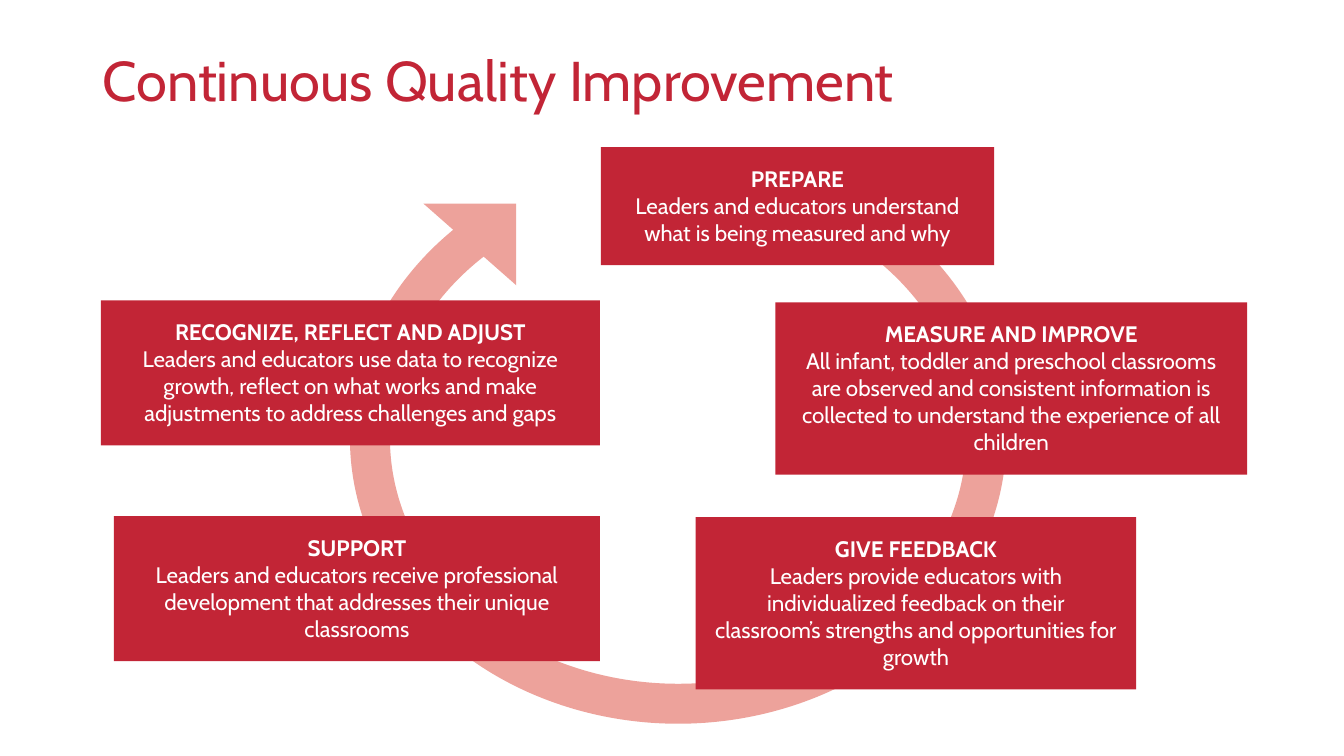
from pptx import Presentation
from pptx.dml.color import RGBColor
from pptx.enum.shapes import MSO_SHAPE
from pptx.enum.text import MSO_ANCHOR, MSO_AUTO_SIZE, PP_ALIGN
from pptx.util import Inches, Pt

RED = RGBColor(0xC2, 0x25, 0x36)
PINK = RGBColor(0xED, 0xA2, 0x9B)
WHITE = RGBColor(0xFF, 0xFF, 0xFF)

STEPS = [
    ((5.96, 1.46, 3.9, 1.17), "PREPARE",
     "Leaders and educators understand what is being measured and why"),
    ((1.13, 5.12, 4.82, 1.44), "SUPPORT",
     "Leaders and educators receive professional development that addresses "
     "their unique classrooms"),
    ((6.9, 5.13, 4.37, 1.71), "GIVE FEEDBACK",
     "Leaders provide educators with individualized feedback on their "
     "classroom’s strengths and opportunities for growth"),
    ((1, 2.98, 4.95, 1.44), "RECOGNIZE, REFLECT AND ADJUST",
     "Leaders and educators use data to recognize growth, reflect on what "
     "works and make adjustments to address challenges and gaps"),
    ((7.69, 3, 4.68, 1.71), "MEASURE AND IMPROVE",
     "All infant, toddler and preschool classrooms are observed and consistent "
     "information is collected to understand the experience of all children"),
]


class CycleSlide:
    """Draws the parts of a cycle diagram on one page in a shared style."""

    font = "Cabin"

    def __init__(self, deck):
        self.page = deck.slides.add_slide(deck.slide_layouts[5])

    def fill_para(self, para, text, size, color, bold=False):
        para.text = text
        for span in para.runs:
            span.font.name = self.font
            span.font.size = Pt(size)
            span.font.bold = bold
            span.font.color.rgb = color

    def title(self, text, bounds):
        box = self.page.shapes.title
        box.left, box.top, box.width, box.height = map(Inches, bounds)
        frame = box.text_frame
        frame.word_wrap = True
        frame.vertical_anchor = MSO_ANCHOR.MIDDLE
        para = frame.paragraphs[0]
        self.fill_para(para, text, 40, RED)
        para.alignment = PP_ALIGN.LEFT

    def shape(self, parent, kind, bounds, color):
        shape = parent.shapes.add_shape(kind, *map(Inches, bounds))
        shape.shadow.inherit = False
        shape.fill.solid()
        shape.fill.fore_color.rgb = color
        shape.line.fill.background()
        return shape

    def loop(self):
        group = self.page.shapes.add_group_shape()
        arc = self.shape(group, MSO_SHAPE.BLOCK_ARC, (3.47, 1.51, 6.51, 5.67), PINK)
        for index, value in enumerate((54, 30.13, 0.07)):
            arc.adjustments[index] = value
        head = self.shape(group, MSO_SHAPE.RIGHT_TRIANGLE, (4.2, 2.02, 0.92, 0.81), PINK)
        arc.rotation = head.rotation = 180

    def step(self, bounds, heading, detail):
        box = self.shape(self.page, MSO_SHAPE.RECTANGLE, bounds, RED)
        frame = box.text_frame
        frame.word_wrap = True
        frame.auto_size = MSO_AUTO_SIZE.SHAPE_TO_FIT_TEXT
        frame.vertical_anchor = MSO_ANCHOR.TOP
        frame.margin_left = frame.margin_right = Inches(0.18)
        frame.margin_top = frame.margin_bottom = Inches(0.18)
        self.fill_para(frame.paragraphs[0], heading, 16, WHITE, bold=True)
        self.fill_para(frame.add_paragraph(), detail, 16, WHITE)
        for para in frame.paragraphs:
            para.alignment = PP_ALIGN.CENTER


def main():
    deck = Presentation()
    deck.slide_width, deck.slide_height = Inches(13.33), Inches(7.5)
    cycle = CycleSlide(deck)
    cycle.title("Continuous Quality Improvement", (0.92, 0.06, 11.5, 1.45))
    cycle.loop()
    for bounds, heading, detail in STEPS:
        cycle.step(bounds, heading, detail)
    deck.save("out.pptx")


if __name__ == "__main__":
    main()
